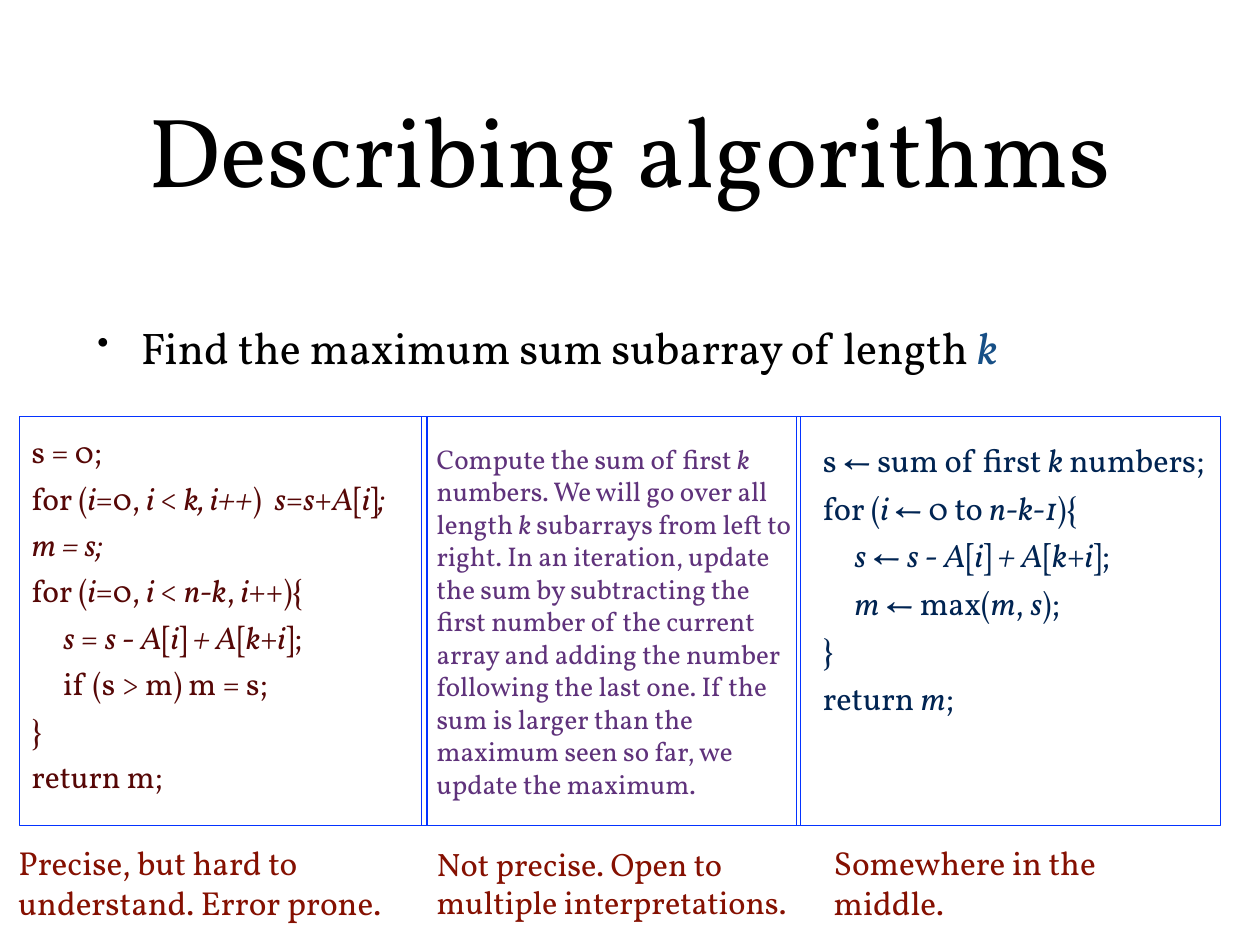
from lxml.etree import SubElement
from pptx import Presentation
from pptx.dml.color import RGBColor
from pptx.enum.shapes import MSO_SHAPE
from pptx.enum.text import MSO_ANCHOR, MSO_AUTO_SIZE, PP_ALIGN
from pptx.oxml.ns import qn
from pptx.util import Cm, Pt

FONT = "Vollkorn"
BLACK = RGBColor(0x00, 0x00, 0x00)
BLUE = RGBColor(0x17, 0x4F, 0x86)
MAROON = RGBColor(0x56, 0x07, 0x06)
PURPLE = RGBColor(0x5F, 0x32, 0x7B)
NAVY = RGBColor(0x00, 0x24, 0x52)
RED = RGBColor(0x85, 0x10, 0x01)
FRAME = RGBColor(0x04, 0x33, 0xFF)

# Asterisks enclose italics; a leading ">" marks an indented line
CODE = [
    "s = 0;",
    "for (*i*=0, *i* < *k, i++*)  *s*=*s*+*A*[*i*]*;*",
    "*m = s;*",
    "for (*i*=0, *i* < *n-k*, *i*++){",
    ">*s* = *s* - *A*[*i*]* + A*[*k*+*i*];",
    ">if (s > m) m = s;",
    "}",
    "return m;",
]
PROSE = [
    "Compute the sum of first *k* numbers. We will go over all length *k* "
    "subarrays from left to right. In an iteration, update the sum by "
    "subtracting the first number of the current array and adding the number "
    "following the last one. If the sum is larger than the maximum seen so "
    "far, we update the maximum."
]
PSEUDOCODE = [
    "s ← sum of first *k* numbers;",
    "for (*i *← 0 to *n-k-1*){",
    ">*s* ← *s* - *A*[*i*]* + A*[*k*+*i*];",
    ">*m* ← max(*m*, *s*);",
    "}",
    "return *m*;",
]


def format_frame(tf):
    tf.word_wrap = True
    tf.auto_size = MSO_AUTO_SIZE.NONE
    tf.vertical_anchor = MSO_ANCHOR.MIDDLE
    tf.margin_left = tf.margin_right = Cm(0.15)
    tf.margin_top = tf.margin_bottom = Cm(0.15)


def add_runs(p, text, size, color):
    for i, part in enumerate(text.split("*")):
        if part:
            r = p.add_run()
            r.text = part
            r.font.name = FONT
            r.font.size = Pt(size)
            r.font.color.rgb = color
            r.font.italic = i % 2 == 1


def add_text(s, box, lines, size, color, before):
    tf = s.shapes.add_textbox(*map(Cm, box)).text_frame
    format_frame(tf)
    for i, line in enumerate(lines):
        p = tf.paragraphs[0] if i == 0 else tf.add_paragraph()
        p.space_before = Pt(before)
        if line.startswith(">"):
            p.level = 1
            pPr = p._p.get_or_add_pPr()
            pPr.set("marL", "0")
            pPr.set("indent", str(Cm(0.9)))
        add_runs(p, line.lstrip(">"), size, color)
    return tf


def add_title(s, box, text):
    sp = s.shapes.title
    sp.left, sp.top, sp.width, sp.height = map(Cm, box)
    format_frame(sp.text_frame)
    p = sp.text_frame.paragraphs[0]
    p.alignment = PP_ALIGN.CENTER
    add_runs(p, text, 80, BLACK)


def add_bullet(s, box, text):
    tf = add_text(s, box, [text], 36, BLACK, 42)
    p = tf.paragraphs[0]
    p.runs[-1].font.color.rgb = BLUE
    pPr = p._p.get_or_add_pPr()
    pPr.set("marL", str(Cm(1.25)))
    pPr.set("indent", str(-Cm(1.25)))
    SubElement(pPr, qn("a:buSzPct")).set("val", "75000")
    SubElement(pPr, qn("a:buChar")).set("char", "•")


def add_frame(s, left, width):
    sp = s.shapes.add_shape(MSO_SHAPE.RECTANGLE, Cm(left), Cm(11.94),
                            Cm(width), Cm(11.73))
    sp.shadow.inherit = False
    sp.fill.background()
    sp.line.color.rgb = FRAME
    sp.line.width = Pt(1)


def main():
    prs = Presentation()
    prs.slide_width, prs.slide_height = Cm(36.12), Cm(27.1)
    s = prs.slides.add_slide(prs.slide_layouts[5])

    # Heading and task
    add_title(s, (2.64, 1.24, 30.84, 5.99), "Describing algorithms")
    add_bullet(s, (2.64, 7.34, 30.84, 5.21),
               "Find the maximum sum subarray of length *k*")

    # Three descriptions of the algorithm
    add_text(s, (0.76, 11.23, 11.53, 12.73), CODE, 25.6, MAROON, 7)
    add_text(s, (12.37, 11.66, 10.62, 12.29), PROSE, 22, PURPLE, 6)
    add_text(s, (23.44, 11.51, 11.53, 10.16), PSEUDOCODE, 26.3, NAVY, 7)

    # Frames around the descriptions
    for left, width in [(0.56, 11.68), (22.83, 12.17), (12.09, 10.87)]:
        add_frame(s, left, width)

    # Verdicts below the frames
    for left, width, size, before, verdict in [
        (0.38, 11.53, 27, 31, "Precise, but hard to understand. Error prone."),
        (12.37, 10.34, 26.3, 30,
         "Not precise. Open to multiple interpretations."),
        (23.75, 10.34, 27, 31, "Somewhere in the middle."),
    ]:
        add_text(s, (left, 23.9, width, 2.82), [verdict], size, RED, before)

    prs.save("out.pptx")


if __name__ == "__main__":
    main()
